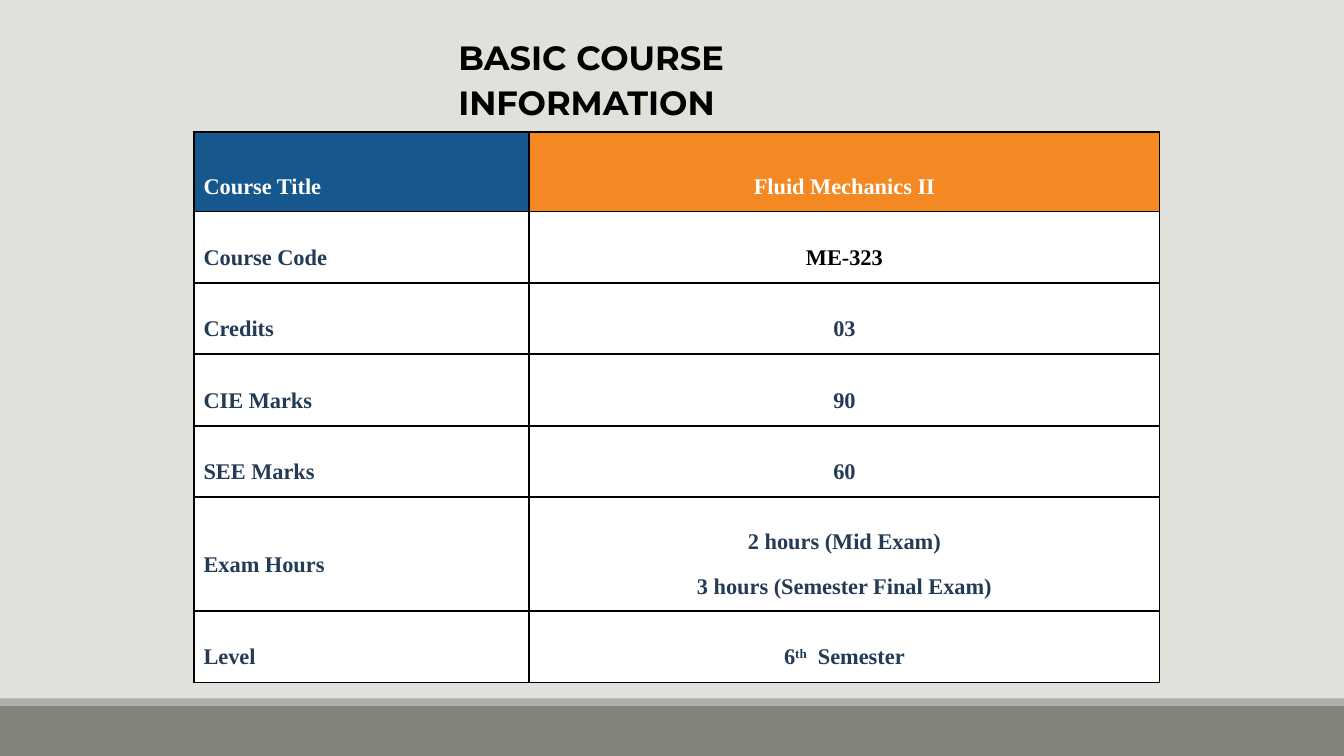
from pptx import Presentation
from pptx.dml.color import RGBColor
from pptx.enum.shapes import MSO_SHAPE as Shape
from pptx.enum.text import MSO_ANCHOR as Anchor, MSO_AUTO_SIZE as AutoSize, PP_ALIGN as Align
from pptx.oxml import parse_xml
from pptx.oxml.ns import nsdecls
from pptx.util import Cm, Pt

COLORS = {
    "background": "E1E1DB",
    "footer": "82847C",
    "stripe": "ACADA8",
    "black": "000000",
    "white": "FFFFFF",
    "navy": "243B55",
    "blue": "16578D",
    "orange": "F48924",
}

COURSE_ROWS = [
    ("Course Title", ["Fluid Mechanics II"]),
    ("Course Code", ["ME-323"]),
    ("Credits", ["03"]),
    ("CIE Marks", ["90"]),
    ("SEE Marks", ["60"]),
    ("Exam Hours", ["2 hours (Mid Exam)", "3 hours (Semester Final Exam)"]),
    ("Level", [("6", "th", "  Semester")]),
]
ROW_HEIGHTS = [2, 1.8, 1.8, 1.8, 1.8, 2.87, 1.8]
COLUMN_WIDTHS = [8.46, 15.88]


def rgb(name):
    return RGBColor.from_string(COLORS[name])


class CourseSlide:
    title_font = "Montserrat"
    table_font = "Times New Roman"

    def __init__(self, deck):
        self.width = deck.slide_width
        self.page = deck.slides.add_slide(deck.slide_layouts[6])
        fill = self.page.background.fill
        fill.solid()
        fill.fore_color.rgb = rgb("background")

    def bar(self, top, height, color):
        bar = self.page.shapes.add_shape(Shape.RECTANGLE, 0, Cm(top), self.width, Cm(height))
        bar.shadow.inherit = False
        bar.fill.solid()
        bar.fill.fore_color.rgb = rgb(color)
        bar.line.fill.background()

    def style(self, para, font, size, color, spacing):
        para.line_spacing = Pt(spacing)
        for span in para.runs:
            span.font.name = font
            span.font.size = Pt(size)
            span.font.bold = True
            span.font.color.rgb = rgb(color)

    def title(self, text, left, top, width, height):
        box = self.page.shapes.add_textbox(Cm(left), Cm(top), Cm(width), Cm(height))
        frame = box.text_frame
        frame.word_wrap = True
        frame.auto_size = AutoSize.SHAPE_TO_FIT_TEXT
        frame.text = text
        self.style(frame.paragraphs[0], self.title_font, 24, "black", 32.1)

    def borders(self, cell):
        properties = cell._tc.get_or_add_tcPr()
        for index, side in enumerate(("lnL", "lnR", "lnT", "lnB")):
            properties.insert(index, parse_xml(
                f'<a:{side} {nsdecls("a")} w="{Pt(1.5)}"><a:solidFill>'
                f'<a:srgbClr val="{COLORS["black"]}"/></a:solidFill></a:{side}>'))

    def cell(self, cell, lines, fill, color, align, spacing):
        cell.fill.solid()
        cell.fill.fore_color.rgb = rgb(fill)
        cell.vertical_anchor = Anchor.MIDDLE
        cell.margin_left = cell.margin_right = Cm(0.25)
        cell.margin_top = cell.margin_bottom = Cm(0.25)
        self.borders(cell)
        frame = cell.text_frame
        for index, line in enumerate(lines):
            para = frame.add_paragraph() if index else frame.paragraphs[0]
            para.alignment = align
            if isinstance(line, str):
                para.text = line
            else:
                for part in line:
                    para.add_run().text = part
                para.runs[1]._r.get_or_add_rPr().set("baseline", "30000")
            self.style(para, self.table_font, 16, color, spacing)

    def table(self, rows, left, top):
        table = self.page.shapes.add_table(
            len(rows), len(COLUMN_WIDTHS), Cm(left), Cm(top),
            Cm(sum(COLUMN_WIDTHS)), Cm(sum(ROW_HEIGHTS))).table
        table.first_row = table.horz_banding = False
        for column, width in zip(table.columns, COLUMN_WIDTHS):
            column.width = Cm(width)
        for index, (label, values) in enumerate(rows):
            table.rows[index].height = Cm(ROW_HEIGHTS[index])
            header = index == 0
            fills = ("blue", "orange") if header else ("white", "white")
            label_color = "white" if header else "navy"
            value_color = "black" if label == "Course Code" else label_color
            spacing = 38.8 if header else 32.5
            self.cell(table.cell(index, 0), [label], fills[0], label_color, Align.LEFT, spacing)
            self.cell(table.cell(index, 1), values, fills[1], value_color, Align.CENTER, spacing)


def main():
    deck = Presentation()
    deck.slide_width = Cm(33.87)
    deck.slide_height = Cm(19.05)
    slide = CourseSlide(deck)
    slide.bar(17.78, 1.27, "footer")
    slide.bar(17.6, 0.18, "stripe")
    slide.title("BASIC COURSE INFORMATION", 11.3, 0.69, 12.83, 1.35)
    slide.table(COURSE_ROWS, 4.88, 3.33)
    deck.save("out.pptx")


if __name__ == "__main__":
    main()
